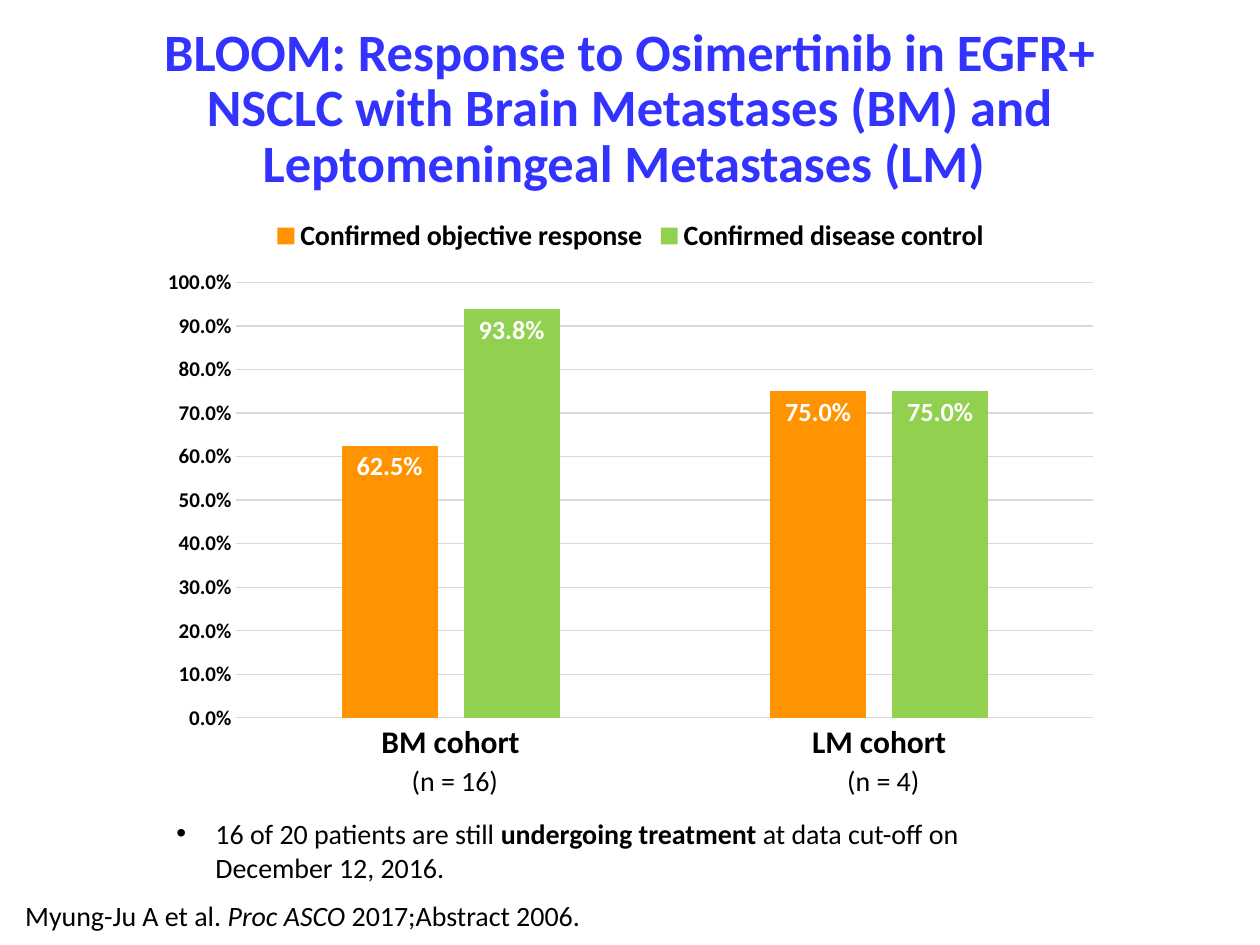
from dataclasses import dataclass

from lxml import etree
from pptx import Presentation
from pptx import util as u
from pptx.chart.data import CategoryChartData
from pptx.dml.color import RGBColor
from pptx.enum import chart as ch
from pptx.enum import text
from pptx.oxml.ns import qn


@dataclass(frozen=True)
class Theme:
    font: str = "Calibri"
    title: str = "3333FF"
    ink: str = "000000"
    label: str = "FFFFFF"
    grid: str = "D9D9D9"
    response: str = "FF9300"
    control: str = "92D050"
    title_size: int = 30
    category_size: int = 18
    text_size: int = 16
    label_size: int = 15
    scale_size: int = 12


theme = Theme()


def style(font, size, color=theme.ink, bold=False):
    font.name, font.size, font.bold = theme.font, u.Pt(size), bold
    font.color.rgb = RGBColor.from_string(color)


def write(paragraph, *parts):
    """Add (wording, emphasis) runs; emphasis is "bold", "italic" or None."""
    style(paragraph.font, theme.text_size)
    for wording, emphasis in parts:
        run = paragraph.add_run()
        run.text = wording
        if emphasis:
            setattr(run.font, emphasis, True)


prs = Presentation()
prs.slide_width, prs.slide_height = u.Inches(10), u.Inches(7.5)
slide = prs.slides.add_slide(prs.slide_layouts[1])

# Title
title = slide.shapes.title
title.left, title.top = u.Inches(0.75), u.Inches(0.25)
title.width, title.height = u.Inches(8.5), u.Inches(1.25)
frame = title.text_frame
frame.margin_left = frame.margin_right = frame.margin_top = frame.margin_bottom = 0
frame.vertical_anchor = text.MSO_ANCHOR.MIDDLE
frame.auto_size = text.MSO_AUTO_SIZE.NONE
frame.text = ("BLOOM: Response to Osimertinib in EGFR+ NSCLC with Brain "
              "Metastases (BM) and Leptomeningeal Metastases (LM) ")
heading = frame.paragraphs[0]
heading.alignment = text.PP_ALIGN.CENTER
heading.line_spacing = 0.88
style(heading.font, theme.title_size, theme.title, True)

# Treatment status
status = slide.placeholders[1]
status.left, status.top = u.Inches(1.3), u.Inches(6.43)
status.width, status.height = u.Inches(6.82), u.Inches(0.64)
status.text_frame.auto_size = text.MSO_AUTO_SIZE.NONE
bullet = status.text_frame.paragraphs[0]
bullet.space_before = u.Pt(0)
props = bullet._p.get_or_add_pPr()
props.set("marL", str(u.Inches(0.31)))
props.set("indent", str(u.Inches(-0.31)))
etree.SubElement(props, qn("a:buFont")).set("typeface", "Arial")
etree.SubElement(props, qn("a:buChar")).set("char", "•")
write(bullet, ("16 of 20 patients are still ", None),
      ("undergoing treatment ", "bold"),
      ("at data cut-off on December 12, 2016.", None))

# Response chart
rates = CategoryChartData(number_format="0.0%")
rates.categories = ["BM cohort", "LM cohort"]
rates.add_series("Confirmed objective response", (0.625, 0.75))
rates.add_series("Confirmed disease control", (0.938, 0.75))
chart = slide.shapes.add_chart(
    ch.XL_CHART_TYPE.COLUMN_CLUSTERED, u.Inches(1.18), u.Inches(1.62),
    u.Inches(7.65), u.Inches(4.51), rates).chart
style(chart.font, 10)
chart.has_title = False
chart.has_legend = True
chart.legend.position = ch.XL_LEGEND_POSITION.TOP
chart.legend.include_in_layout = False
style(chart.legend.font, theme.text_size, bold=True)

cohorts, scale = chart.category_axis, chart.value_axis
for axis, size in ((cohorts, theme.category_size), (scale, theme.scale_size)):
    axis.major_tick_mark = axis.minor_tick_mark = ch.XL_TICK_MARK.NONE
    style(axis.tick_labels.font, size, bold=True)
scale.minimum_scale, scale.maximum_scale, scale.major_unit = 0, 1, 0.1
scale.tick_labels.number_format = "0.0%"
scale.tick_labels.number_format_is_linked = False
scale.format.line.fill.background()
for line in (cohorts.format.line, scale.major_gridlines.format.line):
    line.color.rgb = RGBColor.from_string(theme.grid)
    line.width = u.Pt(0.75)

plot = chart.plots[0]
plot.gap_width, plot.overlap, plot.vary_by_categories = 219, -27, False
for series, color in zip(plot.series, (theme.response, theme.control)):
    series.format.fill.solid()
    series.format.fill.fore_color.rgb = RGBColor.from_string(color)
    labels = series.data_labels
    labels.show_value = True
    labels.position = ch.XL_LABEL_POSITION.INSIDE_END
    labels.number_format, labels.number_format_is_linked = "0.0%", False
    style(labels.font, theme.label_size, theme.label, True)

# Citation
citation = slide.shapes.add_textbox(
    u.Inches(0), u.Inches(7.1), u.Inches(9.25), u.Inches(0.4)).text_frame
citation.word_wrap = True
citation.vertical_anchor = text.MSO_ANCHOR.BOTTOM
citation.margin_left = u.Inches(0.2)
citation.margin_bottom = u.Inches(0.1)
write(citation.paragraphs[0], ("Myung-Ju A et al. ", None),
      ("Proc ASCO ", "italic"), ("2017;Abstract 2006.", None))

# Cohort sizes
for left, patients in ((2.72, 16), (6.12, 4)):
    cohort_size = slide.shapes.add_textbox(
        u.Inches(left), u.Inches(6.01), u.Inches(1.73), u.Inches(0.37)).text_frame
    cohort_size.word_wrap = True
    cohort_size.paragraphs[0].alignment = text.PP_ALIGN.CENTER
    write(cohort_size.paragraphs[0], (f" (n = {patients})", None))

prs.save("out.pptx")
